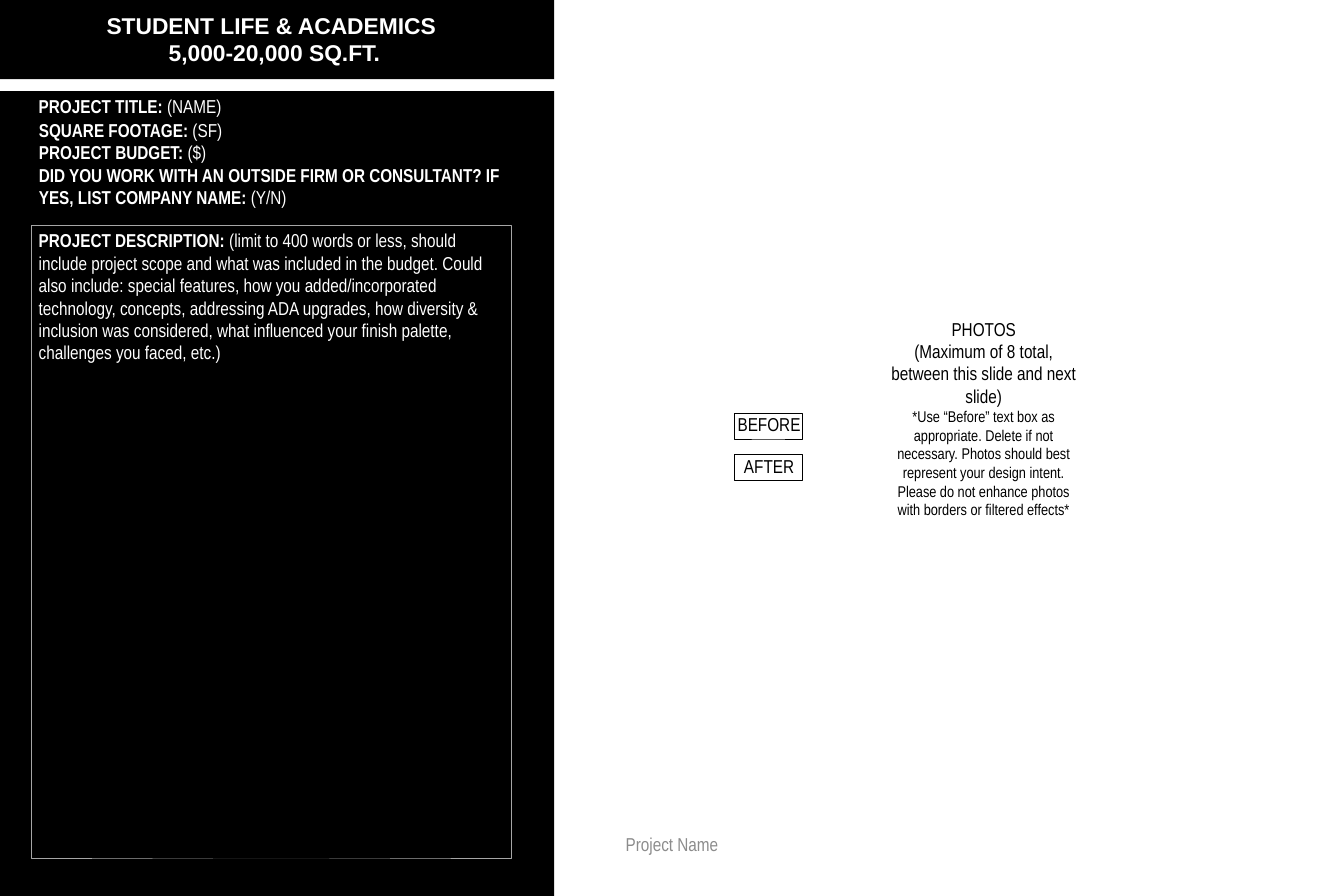
from dataclasses import dataclass
from typing import NamedTuple, Optional

import pptx
import pptx.dml.color
import pptx.enum.shapes
import pptx.enum.text
import pptx.oxml.ns
import pptx.presentation
import pptx.shapes.autoshape
import pptx.slide
import pptx.util

Pt = pptx.util.Pt
RGB = pptx.dml.color.RGBColor
ALIGN = pptx.enum.text.PP_ALIGN
ANCHOR = pptx.enum.text.MSO_ANCHOR


@dataclass(frozen=True)
class Theme:
    black: RGB = RGB(0, 0, 0)
    white: RGB = RGB(255, 255, 255)
    footer_gray: RGB = RGB(0x8C, 0x8C, 0x8C)
    frame_gray: RGB = RGB(0xA6, 0xA6, 0xA6)
    heading_font: str = "Arial"
    text_font: str = "Arial Narrow"
    heading_size: float = 22
    text_size: float = 18
    note_size: float = 15


THEME = Theme()


class Box(NamedTuple):
    left: float
    top: float
    width: float
    height: float


class Line(NamedTuple):
    """A paragraph: a bold label, then plain text."""
    label: str = ""
    detail: str = ""
    size: float = THEME.text_size


class Style(NamedTuple):
    color: RGB
    font: str = THEME.text_font
    align: ALIGN = ALIGN.LEFT
    anchor: ANCHOR = ANCHOR.TOP
    side_inset: float = 7.2
    end_inset: float = 3.6
    indent: float = 0


class Frame(NamedTuple):
    color: RGB
    width: float


FACTS = Style(THEME.white)
HEADING = Style(THEME.white, THEME.heading_font, ALIGN.CENTER, ANCHOR.MIDDLE)
FOOTER = Style(THEME.footer_gray, align=ALIGN.CENTER, side_inset=0, end_inset=0)
PHOTO_TEXT = FOOTER._replace(color=THEME.black, indent=1.44)
TAG_FRAME = Frame(THEME.black, 0.75)
DESCRIPTION_FRAME = Frame(THEME.frame_gray, 0.25)

PANEL_WIDTH = 534.24
PANELS = [Box(0, -0.72, PANEL_WIDTH, 77.04), Box(0, 87.84, PANEL_WIDTH, 776.16)]
FACTS_LEFT, FACTS_WIDTH = 30.24, 462.24
TAG_TOP, TAG_STEP = 398.16, 40.32

HEADING_LINES = [Line("STUDENT LIFE & ACADEMICS ", size=THEME.heading_size),
                 Line("5,000-20,000 SQ.FT.", size=THEME.heading_size)]
PROJECT_LINES = [Line("PROJECT TITLE: ", "(NAME)")]
FACT_LINES = [
    Line("SQUARE FOOTAGE: ", "(SF)"),
    Line("PROJECT BUDGET: ", "($)"),
    Line("DID YOU WORK WITH AN OUTSIDE FIRM OR CONSULTANT? IF YES, "
         "LIST COMPANY NAME: ", "(Y/N)"),
]
DESCRIPTION_LINES = [Line(
    "PROJECT DESCRIPTION: ",
    "(limit to 400 words or less, should include project scope and what was "
    "included in the budget. Could also include: special features, how you "
    "added/incorporated technology, concepts, addressing ADA upgrades, how "
    "diversity & inclusion was considered, what influenced your finish palette, "
    "challenges you faced, etc.)")]
PHOTO_LINES = [
    Line(detail="PHOTOS"),
    Line(detail="(Maximum of 8 total, between this slide and next slide)"),
    Line(detail="*Use “Before” text box as appropriate. Delete if not necessary. "
                "Photos should best represent your design intent. Please do not "
                "enhance photos with borders or filtered effects*",
         size=THEME.note_size),
]


def write(shape: pptx.shapes.autoshape.Shape, lines: list[Line], style: Style) -> None:
    frame = shape.text_frame
    frame.word_wrap = True
    frame.auto_size = pptx.enum.text.MSO_AUTO_SIZE.NONE
    frame.vertical_anchor = style.anchor
    frame.margin_left = frame.margin_right = Pt(style.side_inset)
    frame.margin_top = frame.margin_bottom = Pt(style.end_inset)
    for index, line in enumerate(lines):
        paragraph = frame.add_paragraph() if index else frame.paragraphs[0]
        paragraph.alignment = style.align
        paragraph.space_before = Pt(0)
        paragraph.font.name = style.font
        paragraph.font.size = Pt(line.size)
        paragraph.font.color.rgb = style.color
        for words, bold in ((line.label, True), (line.detail, False)):
            if words:
                run = paragraph.add_run()
                run.text = words
                run.font.bold = bold
        properties = paragraph._p.get_or_add_pPr()
        properties.set("marL", str(Pt(style.indent)))
        properties.set("indent", "0")
        no_bullet = pptx.oxml.parse_xml(
            f"<a:buNone {pptx.oxml.ns.nsdecls('a')}/>")
        properties.find(pptx.oxml.ns.qn("a:defRPr")).addprevious(no_bullet)


def add_rectangle(slide: pptx.slide.Slide, box: Box, fill: Optional[RGB] = None,
                  frame: Optional[Frame] = None) -> pptx.shapes.autoshape.Shape:
    rectangle = slide.shapes.add_shape(
        pptx.enum.shapes.MSO_SHAPE.RECTANGLE, *map(Pt, box))
    rectangle.shadow.inherit = False
    if fill is None:
        rectangle.fill.background()
    else:
        rectangle.fill.solid()
        rectangle.fill.fore_color.rgb = fill
    if frame is None:
        rectangle.line.fill.background()
    else:
        rectangle.line.color.rgb = frame.color
        rectangle.line.width = Pt(frame.width)
    return rectangle


def add_text(slide: pptx.slide.Slide, box: Box, lines: list[Line], style: Style) -> None:
    write(slide.shapes.add_textbox(*map(Pt, box)), lines, style)


def fill_placeholder(holder: pptx.shapes.autoshape.Shape, box: Box,
                     lines: list[Line], style: Style) -> None:
    """Move a placeholder into its box, in front of everything drawn so far."""
    holder.left, holder.top, holder.width, holder.height = map(Pt, box)
    holder._element.getparent().append(holder._element)
    write(holder, lines, style)


def build_slide(deck: pptx.presentation.Presentation) -> None:
    slide = deck.slides.add_slide(deck.slide_layouts[1])
    for panel in PANELS:
        add_rectangle(slide, panel, fill=THEME.black)

    fill_placeholder(slide.shapes.title, Box(18, 7.2, 493.2, 60.48),
                     HEADING_LINES, HEADING)
    add_text(slide, Box(FACTS_LEFT, 87.84, FACTS_WIDTH, 51.12), PROJECT_LINES, FACTS)
    fill_placeholder(slide.placeholders[1],
                     Box(FACTS_LEFT, 110.88, FACTS_WIDTH, 94.32), FACT_LINES, FACTS)
    description = add_rectangle(slide, Box(FACTS_LEFT, 217.44, FACTS_WIDTH, 609.84),
                                frame=DESCRIPTION_FRAME)
    write(description, DESCRIPTION_LINES, FACTS)

    for row, tag in enumerate(("BEFORE", "AFTER")):
        tag_box = Box(707.76, TAG_TOP + row * TAG_STEP, 66.24, 25.2)
        write(add_rectangle(slide, tag_box, frame=TAG_FRAME),
              [Line(detail=tag)], PHOTO_TEXT)
    add_text(slide, Box(851.76, 306, 192.24, 210.24), PHOTO_LINES, PHOTO_TEXT)
    add_text(slide, Box(440.64, 803.52, 414.72, 43.2),
             [Line(detail="Project Name")], FOOTER)


def main() -> None:
    deck = pptx.Presentation()
    deck.slide_width, deck.slide_height = Pt(1296), Pt(864)
    build_slide(deck)
    deck.save("out.pptx")


if __name__ == "__main__":
    main()
